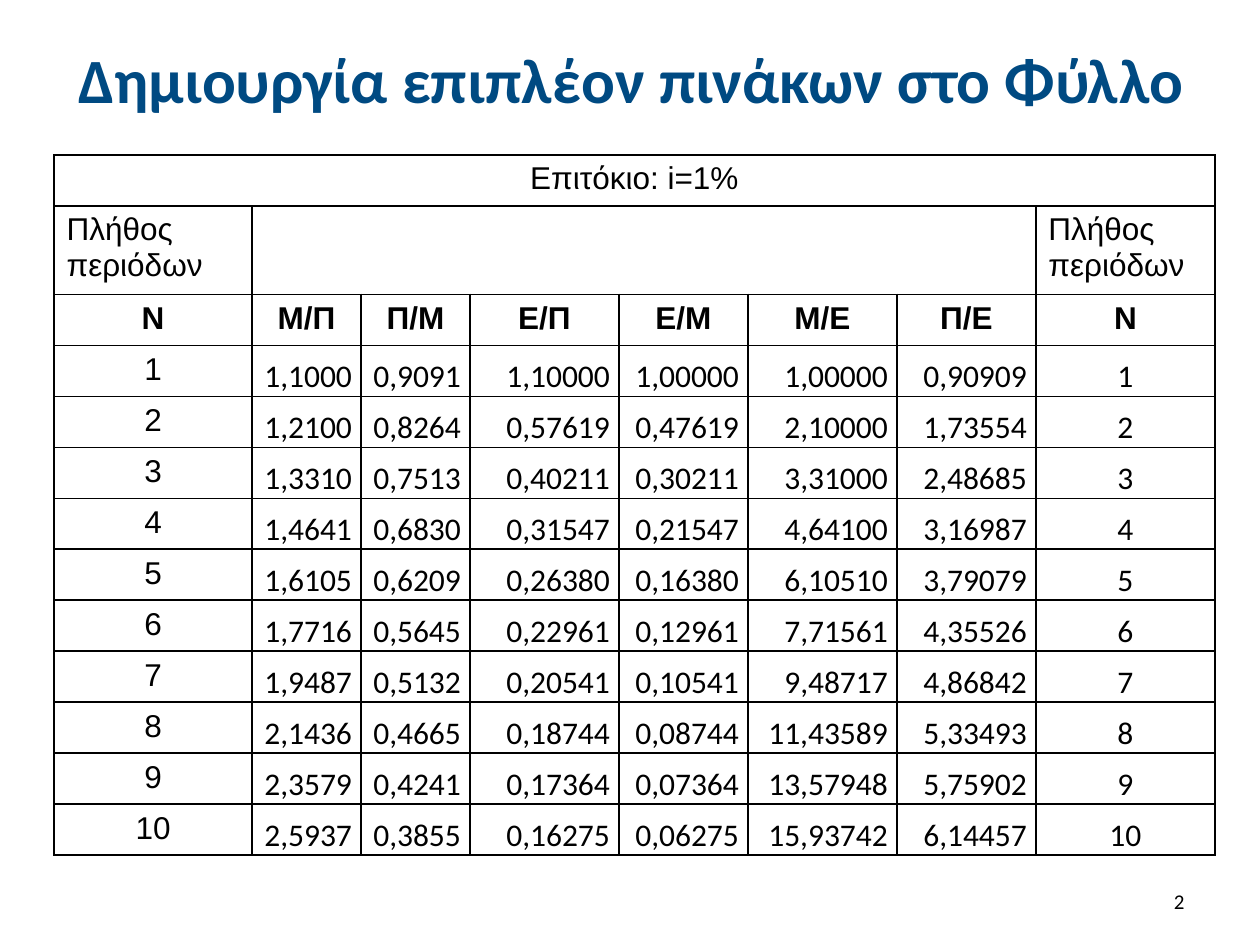
"""Build a slide with a table of compound interest factors."""
from lxml import etree
from pptx import Presentation, util as u
from pptx.dml.color import RGBColor
from pptx.enum import text as t
from pptx.oxml.ns import qn

TITLE = "Δημιουργία επιπλέον πινάκων στο Φύλλο"
RATE = "Επιτόκιο: i=1%"
PERIODS = "Πλήθος περιόδων"
SLIDE_NUMBER = "2"
HEADINGS = ["Ν", "Μ/Π", "Π/Μ", "Ε/Π", "Ε/Μ", "Μ/Ε", "Π/Ε", "Ν"]
FACTORS = [
    ("1,1000", "0,9091", "1,10000", "1,00000", "1,00000", "0,90909"),
    ("1,2100", "0,8264", "0,57619", "0,47619", "2,10000", "1,73554"),
    ("1,3310", "0,7513", "0,40211", "0,30211", "3,31000", "2,48685"),
    ("1,4641", "0,6830", "0,31547", "0,21547", "4,64100", "3,16987"),
    ("1,6105", "0,6209", "0,26380", "0,16380", "6,10510", "3,79079"),
    ("1,7716", "0,5645", "0,22961", "0,12961", "7,71561", "4,35526"),
    ("1,9487", "0,5132", "0,20541", "0,10541", "9,48717", "4,86842"),
    ("2,1436", "0,4665", "0,18744", "0,08744", "11,43589", "5,33493"),
    ("2,3579", "0,4241", "0,17364", "0,07364", "13,57948", "5,75902"),
    ("2,5937", "0,3855", "0,16275", "0,06275", "15,93742", "6,14457"),
]

BLUE = RGBColor(0x00, 0x4A, 0x82)
BLACK = RGBColor(0x00, 0x00, 0x00)
PIXEL = u.Inches(1) / 126
COLUMN_WIDTHS = [198, 109, 109, 149, 129, 149, 139, 179]
ROW_HEIGHT = 51
LEFT, CENTER, RIGHT = t.PP_ALIGN.LEFT, t.PP_ALIGN.CENTER, t.PP_ALIGN.RIGHT
TOP, MIDDLE, BOTTOM = t.MSO_ANCHOR.TOP, t.MSO_ANCHOR.MIDDLE, t.MSO_ANCHOR.BOTTOM

LABEL = {"name": "Arial", "size": u.Pt(18), "bold": False}
HEADING = {**LABEL, "bold": True}
NUMBER = {**LABEL, "name": "Calibri"}
TIGHT = {"margin_left": 9, "margin_right": 9, "margin_top": 0, "margin_bottom": 0}


def emu(pixels):
    return u.Emu(round(pixels * PIXEL))


def place(shape, left, top, width, height):
    box = {"left": left, "top": top, "width": width, "height": height}
    for name, value in box.items():
        setattr(shape, name, emu(value))


def write(frame, words, alignment, font_format, color=BLACK):
    paragraph = frame.paragraphs[0]
    paragraph.alignment = alignment
    run = paragraph.add_run()
    run.text = words
    for name, value in font_format.items():
        setattr(run.font, name, value)
    run.font.color.rgb = color


def add_borders(cell):
    properties = cell._tc.get_or_add_tcPr()
    for position, side in enumerate(("lnL", "lnR", "lnT", "lnB")):
        line = etree.Element(qn(f"a:{side}"), w=str(u.Pt(1)))
        fill = etree.SubElement(line, qn("a:solidFill"))
        etree.SubElement(fill, qn("a:srgbClr"), val=str(BLACK))
        properties.insert(position, line)


def fill_cell(cell, words, alignment, font_format, anchor=TOP, margins=None):
    cell.vertical_anchor = anchor
    for name, value in (margins or {}).items():
        setattr(cell, name, emu(value))
    write(cell.text_frame, words, alignment, font_format)


presentation = Presentation()
presentation.slide_width, presentation.slide_height = u.Inches(10), u.Inches(7.5)
slide = presentation.slides.add_slide(presentation.slide_layouts[5])

title = slide.shapes.title
place(title, 64, 16, 1134, 125)
title.text_frame.vertical_anchor = MIDDLE
write(title.text_frame, TITLE, CENTER,
      {"name": "Calibri", "size": u.Pt(36), "bold": True}, BLUE)

number_box = slide.shapes.add_textbox(0, 0, 0, 0)
place(number_box, 903, 876, 294, 50)
number_box.text_frame.word_wrap = True
number_box.text_frame.vertical_anchor = MIDDLE
write(number_box.text_frame, SLIDE_NUMBER, RIGHT, {"name": "Calibri", "size": u.Pt(12)})

row_count, column_count = len(FACTORS) + 3, len(COLUMN_WIDTHS)
last = column_count - 1
table = slide.shapes.add_table(
    row_count, column_count, emu(54), emu(155),
    emu(sum(COLUMN_WIDTHS)), emu(ROW_HEIGHT * row_count)).table
table.first_row = table.horz_banding = False
for column, width in zip(table.columns, COLUMN_WIDTHS):
    column.width = emu(width)
for row in table.rows:
    row.height = emu(ROW_HEIGHT)
for cell in table.iter_cells():
    cell.fill.background()
    add_borders(cell)

table.cell(0, 0).merge(table.cell(0, last))
table.cell(1, 1).merge(table.cell(1, last - 1))
fill_cell(table.cell(0, 0), RATE, CENTER, LABEL)
for column in (0, last):
    fill_cell(table.cell(1, column), PERIODS, LEFT, LABEL)
for column, heading in enumerate(HEADINGS):
    fill_cell(table.cell(2, column), heading, CENTER, HEADING)
for period, factors in enumerate(FACTORS, 1):
    row = period + 2
    fill_cell(table.cell(row, 0), str(period), CENTER, LABEL)
    for column, factor in enumerate(factors, 1):
        fill_cell(table.cell(row, column), factor, RIGHT, NUMBER, BOTTOM, TIGHT)
    fill_cell(table.cell(row, last), str(period), CENTER, NUMBER, BOTTOM, TIGHT)

presentation.save("out.pptx")
